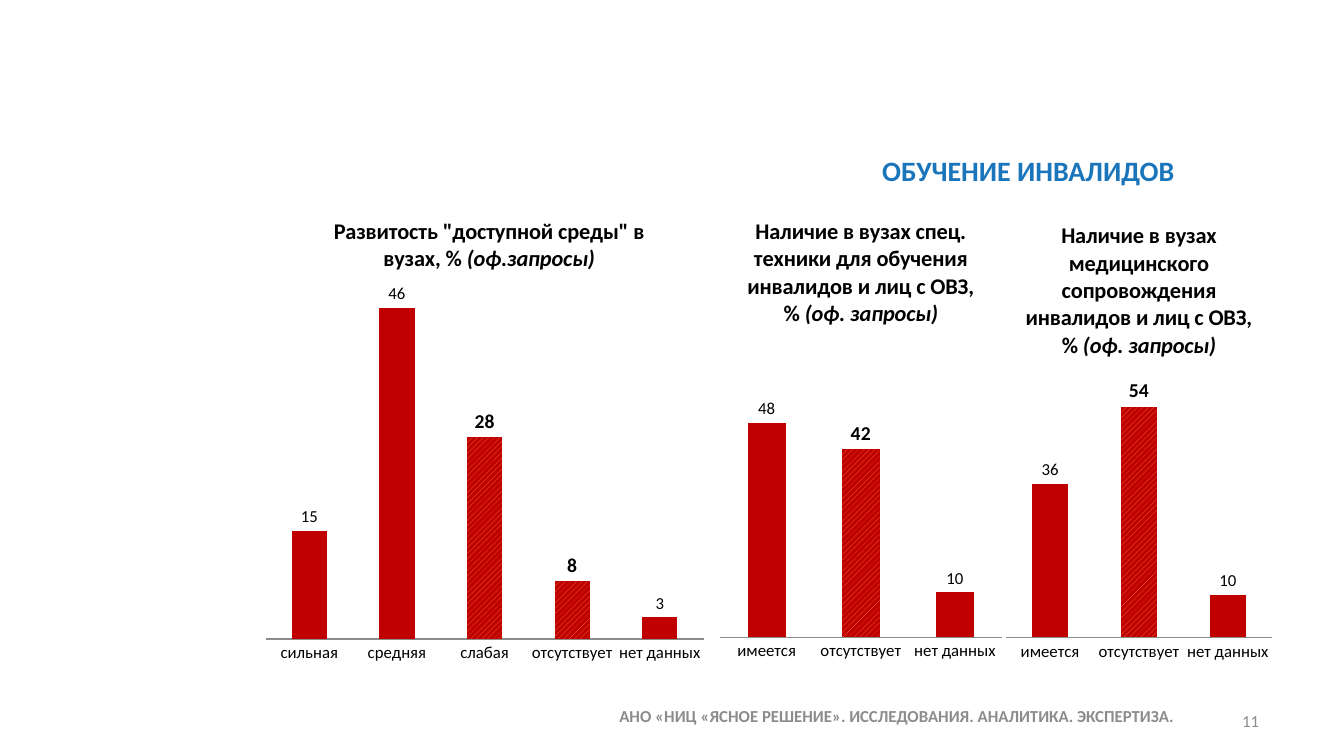
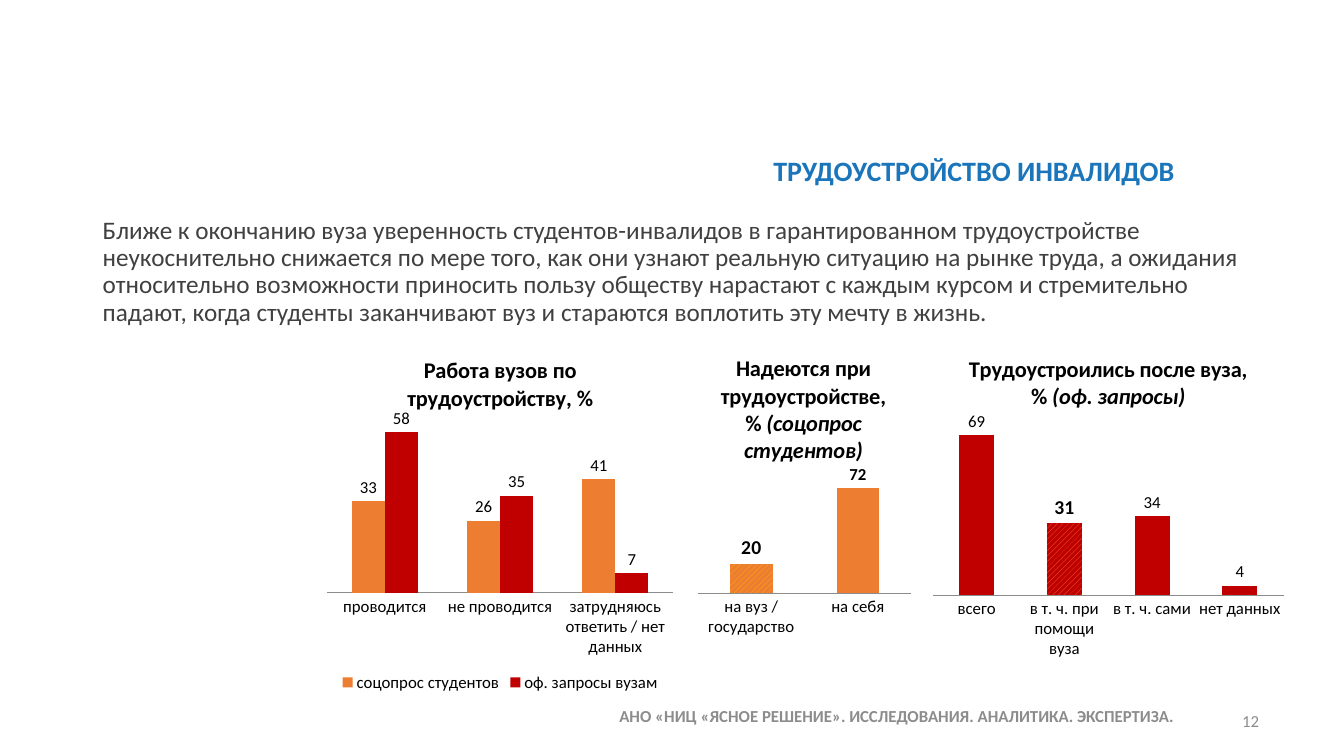
from dataclasses import dataclass

from lxml.etree import SubElement
from pptx import Presentation
from pptx.chart.chart import Chart
from pptx.chart.data import CategoryChartData
from pptx.dml.color import RGBColor
from pptx.enum.chart import (XL_CHART_TYPE, XL_LABEL_POSITION,
                             XL_LEGEND_POSITION, XL_TICK_MARK)
from pptx.enum.dml import MSO_PATTERN
from pptx.enum.text import MSO_ANCHOR, PP_ALIGN
from pptx.oxml.ns import qn
from pptx.slide import Slide
from pptx.util import Cm, Pt

FONT = "Calibri"
BLACK, BLUE, GREY, DARK = "000000", "1B75BB", "8C8C8C", "404040"
RED, ORANGE, GOLD = "C00000", "ED7D31", "FFC000"
HATCH = {RED: ORANGE, ORANGE: GOLD}
FOOTER = "АНО «НИЦ «ЯСНОЕ РЕШЕНИЕ». ИССЛЕДОВАНИЯ. АНАЛИТИКА. ЭКСПЕРТИЗА."

Box = tuple[float, float, float, float]
TITLE_BOX: Box = (2.34, 4.01, 27.51, 0.69)
BODY_BOX: Box = (2.34, 5.36, 30.12, 11.81)
FOOTER_BOX: Box = (11.23, 17.65, 18.62, 1.02)
NUMBER_BOX: Box = (30.58, 17.65, 1.88, 1.02)


@dataclass
class Series:
    name: str
    values: tuple[int, ...]
    color: str = RED


@dataclass
class BarChart:
    """box is in centimetres, plot in fractions of the chart."""
    box: Box
    plot: Box
    title: str
    source: str
    categories: tuple[str, ...]
    series: tuple[Series, ...]
    axis_max: int
    hatched: tuple[int, ...] = ()
    bold_labels: tuple[int, ...] = ()


@dataclass
class Page:
    number: int
    title: str
    charts: tuple[BarChart, ...]
    body: str = ""


ANSWERS = ("имеется", "отсутствует", "нет данных")

PAGES = (
    Page(11, "ОБУЧЕНИЕ ИНВАЛИДОВ", (
        BarChart((17.91, 5, 7.57, 12.29), (0.03, 0.35, 0.94, 0.55),
                 "Наличие в вузах спец. техники для обучения инвалидов и лиц с ОВЗ, % ",
                 "(оф. запросы)", ANSWERS,
                 (Series("Вузы", (48, 42, 10)),), 60, hatched=(1,)),
        BarChart((24.97, 5.11, 7.47, 12.17), (0.05, 0.37, 0.9, 0.53),
                 "Наличие в вузах медицинского сопровождения инвалидов и лиц с ОВЗ, % ",
                 "(оф. запросы)", ANSWERS,
                 (Series("Вузы", (36, 54, 10)),), 60, hatched=(1,)),
        BarChart((6.68, 5, 11.28, 11.94), (0, 0.17, 0.98, 0.76),
                 'Развитость "доступной среды" в вузах, % ', "(оф.запросы)",
                 ("сильная", "средняя", "слабая", "отсутствует", "нет данных"),
                 (Series("Вузы", (15, 46, 28, 8, 3)),), 50, hatched=(2, 3)),
    )),
    Page(12, "ТРУДОУСТРОЙСТВО ИНВАЛИДОВ", (
        BarChart((17.48, 8.53, 5.54, 8.92), (0.02, 0.39, 0.97, 0.33),
                 "Надеются при трудоустройстве, % ", "(соцопрос студентов)",
                 ("на вуз / государство", "на себя"),
                 (Series("Студенты", (20, 72), ORANGE),), 80,
                 hatched=(0,), bold_labels=(1,)),
        BarChart((23.42, 8.53, 9.02, 8.99), (0.01, 0.2, 0.98, 0.52),
                 "Трудоустроились после вуза, % ", "(оф. запросы)",
                 ("всего", "в т. ч. при помощи вуза", "в т. ч. сами", "нет данных"),
                 (Series("Вузы", (69, 31, 34, 4)),), 80, hatched=(1,)),
        BarChart((7.87, 8.53, 9.47, 9.02), (0.04, 0.17, 0.92, 0.54),
                 "Работа вузов по трудоустройству, %", "",
                 ("проводится", "не проводится", "затрудняюсь ответить / нет данных"),
                 (Series("соцопрос студентов", (33, 26, 41), ORANGE),
                  Series("оф. запросы вузам", (58, 35, 7))), 70),
    ), body="Ближе к окончанию вуза уверенность студентов-инвалидов в гарантированном "
            "трудоустройстве неукоснительно снижается по мере того, как они узнают реальную "
            "ситуацию на рынке труда, а ожидания относительно возможности приносить пользу "
            "обществу нарастают с каждым курсом и стремительно падают, когда студенты "
            "заканчивают вуз и стараются воплотить эту мечту в жизнь."),
)


def rgb(color: str) -> RGBColor:
    return RGBColor.from_string(color)


def style_font(font, size: float, color: str = BLACK, bold: bool = False,
               italic: bool = False) -> None:
    font.name, font.size, font.bold, font.italic = FONT, Pt(size), bold, italic
    font.color.rgb = rgb(color)


def add_text(s: Slide, box: Box, text: str, size: float, color: str,
             bold: bool = False, align: PP_ALIGN = PP_ALIGN.LEFT,
             anchor: MSO_ANCHOR = MSO_ANCHOR.TOP, spacing: float = 1.0) -> None:
    tf = s.shapes.add_textbox(*map(Cm, box)).text_frame
    tf.word_wrap = True
    tf.vertical_anchor = anchor
    p = tf.paragraphs[0]
    p.text = text
    p.alignment = align
    p.line_spacing = spacing
    style_font(p.runs[0].font, size, color, bold)


def set_plot_layout(chart: Chart, plot: Box) -> None:
    """Fix the inner plot area at the given fractions of the chart."""
    area = chart._chartSpace.find(".//" + qn("c:plotArea"))
    for old in area.findall(qn("c:layout")):
        area.remove(old)
    layout = SubElement(area, qn("c:layout"))
    area.insert(0, layout)
    manual = SubElement(layout, qn("c:manualLayout"))
    settings = [("layoutTarget", "inner"), ("xMode", "edge"), ("yMode", "edge"),
                *zip("xywh", plot)]
    for tag, value in settings:
        SubElement(manual, qn(f"c:{tag}")).set("val", str(value))


def style_axes(chart: Chart, axis_max: int) -> None:
    values = chart.value_axis
    values.minimum_scale, values.maximum_scale = 0, axis_max
    values.has_major_gridlines = False
    values.visible = False
    cats = chart.category_axis
    cats.major_tick_mark = cats.minor_tick_mark = XL_TICK_MARK.NONE
    cats.format.line.color.rgb = rgb(GREY)
    cats.format.line.width = Pt(0.75)
    style_font(cats.tick_labels.font, 12)


def style_series(series, spec_color: str, hatched: tuple[int, ...],
                 bold_labels: tuple[int, ...]) -> None:
    fill = series.format.fill
    fill.solid()
    fill.fore_color.rgb = rgb(spec_color)
    series.invert_if_negative = False
    labels = series.data_labels
    labels.show_value = True
    labels.position = XL_LABEL_POSITION.OUTSIDE_END
    style_font(labels.font, 12)
    for i in hatched:
        fill = series.points[i].format.fill
        fill.patterned()
        fill.pattern = MSO_PATTERN.WIDE_UPWARD_DIAGONAL
        fill.fore_color.rgb = rgb(HATCH[spec_color])
        fill.back_color.rgb = rgb(spec_color)
    for i in hatched + bold_labels:
        label = series.points[i].data_label
        style_font(label.font, 14 if i in hatched else 12, bold=True)
        label.position = XL_LABEL_POSITION.OUTSIDE_END


def add_bar_chart(s: Slide, bar: BarChart) -> None:
    data = CategoryChartData()
    data.categories = bar.categories
    for item in bar.series:
        data.add_series(item.name, item.values)
    chart = s.shapes.add_chart(XL_CHART_TYPE.COLUMN_CLUSTERED,
                               *map(Cm, bar.box), data).chart
    style_font(chart.font, 10)

    chart.has_title = True
    p = chart.chart_title.text_frame.paragraphs[0]
    for text, italic in ((bar.title, False), (bar.source, True)):
        if text:
            r = p.add_run()
            r.text = text
            style_font(r.font, 16, bold=True, italic=italic)

    chart.has_legend = len(bar.series) > 1
    if chart.has_legend:
        chart.legend.position = XL_LEGEND_POSITION.BOTTOM
        chart.legend.include_in_layout = False
        style_font(chart.legend.font, 12)

    plot = chart.plots[0]
    plot.gap_width, plot.overlap = 150, 0
    plot.vary_by_categories = False
    style_axes(chart, bar.axis_max)
    for series, item in zip(plot.series, bar.series):
        style_series(series, item.color, bar.hatched, bar.bold_labels)
    set_plot_layout(chart, bar.plot)


def add_page(prs: Presentation, page: Page) -> None:
    s = prs.slides.add_slide(prs.slide_layouts[6])
    add_text(s, TITLE_BOX, page.title, 20, BLUE, bold=True, align=PP_ALIGN.RIGHT,
             anchor=MSO_ANCHOR.MIDDLE, spacing=0.9)
    if page.body:
        add_text(s, BODY_BOX, page.body, 18, DARK, spacing=0.9)
    add_text(s, FOOTER_BOX, FOOTER, 12, GREY, bold=True, align=PP_ALIGN.RIGHT)
    add_text(s, NUMBER_BOX, str(page.number), 12, GREY, align=PP_ALIGN.CENTER,
             anchor=MSO_ANCHOR.MIDDLE)
    for bar in page.charts:
        add_bar_chart(s, bar)


def main() -> None:
    prs = Presentation()
    prs.slide_width, prs.slide_height = Cm(33.87), Cm(19.05)
    for page in PAGES:
        add_page(prs, page)
    prs.save("out.pptx")


if __name__ == "__main__":
    main()
